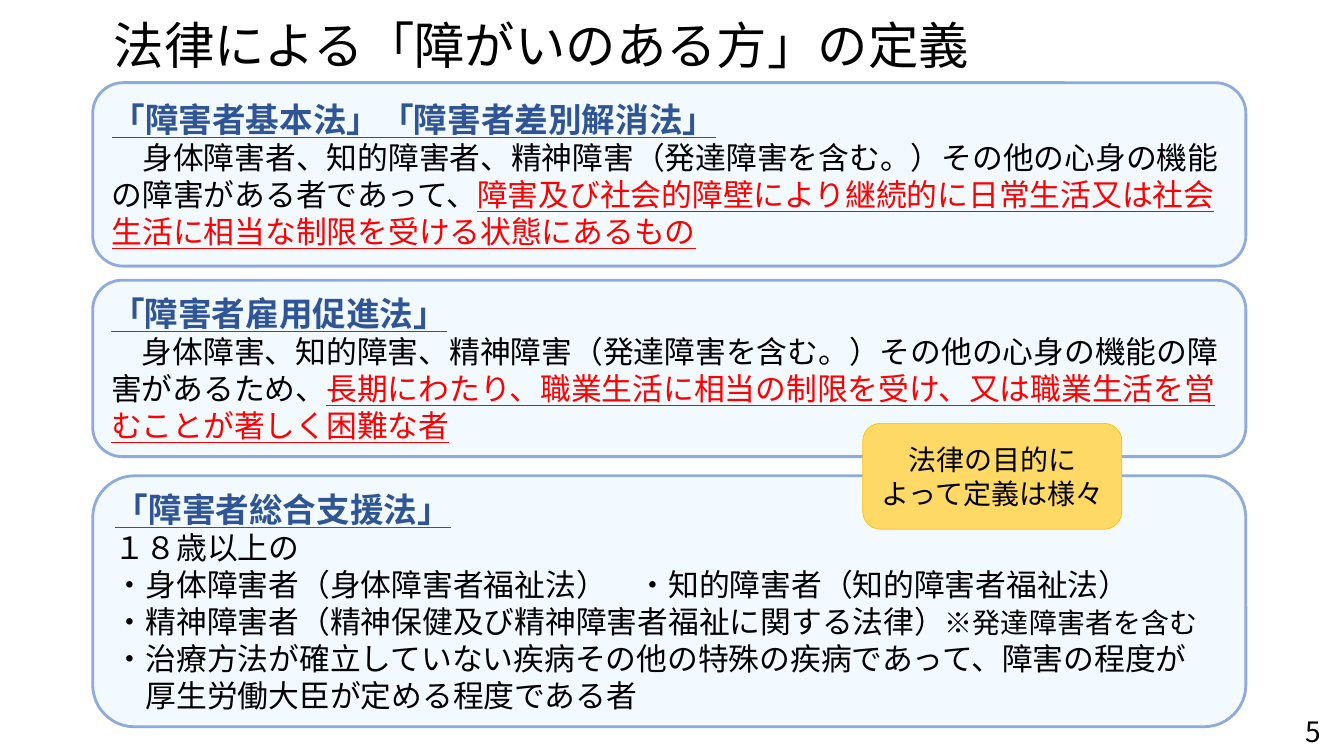
import pptx
import pptx.dml.color
import pptx.enum.shapes
import pptx.enum.text
import pptx.oxml.ns
import pptx.util
from lxml import etree

Pt = pptx.util.Pt
SHAPES = pptx.enum.shapes.MSO_SHAPE
ANCHOR = pptx.enum.text.MSO_ANCHOR
ALIGN = pptx.enum.text.PP_ALIGN
FONT = "Noto Sans CJK JP"
COLORS = {
    "panel": "F3FAFF", "panel_line": "8FAADC", "heading": "2F5597",
    "text": "000000", "key": "FF0000", "callout": "FFD966",
    "callout_line": "FFC000",
}
FORMATS = {
    "title": {"size": Pt(36)},
    "heading": {"size": Pt(24), "bold": True, "underline": True},
    "body": {"size": Pt(22)},
    "key": {"size": Pt(22), "underline": True},
    "note": {"size": Pt(20)},
}
PANEL_FRAME = {
    "word_wrap": True, "vertical_anchor": ANCHOR.MIDDLE,
    "margin_left": Pt(7.2), "margin_right": Pt(7.2),
    "margin_top": Pt(0), "margin_bottom": Pt(14.4),
}
LINE_HEIGHT = 1.2
PANEL_LEFT, PANEL_WIDTH = 66.24, 823.68
PANELS = [
    (59.04, 131.04, "「障害者基本法」「障害者差別解消法」", [
        [("　身体障害者、知的障害者、精神障害（発達障害を含む。）その他の心身の機能の障害がある者であって、", "body"),
         ("障害及び社会的障壁により継続的に日常生活又は社会生活に相当な制限を受ける状態にあるもの", "key")],
    ]),
    (200.16, 126, "「障害者雇用促進法」", [
        [("　身体障害、知的障害、精神障害（発達障害を含む。）その他の心身の機能の障害があるため、", "body"),
         ("長期にわたり、職業生活に相当の制限を受け、又は職業生活を営むことが著しく困難な者", "key")],
    ]),
    (339.84, 179.28, "「障害者総合支援法」", [
        [("１８歳以上の", "body")],
        [("・身体障害者（身体障害者福祉法）　・知的障害者（知的障害者福祉法）", "body")],
        [("・精神障害者（精神保健及び精神障害者福祉に関する法律）", "body"),
         ("※発達障害者を含む", "note")],
        [("・治療方法が確立していない疾病その他の特殊の疾病であって、障害の程度が", "body")],
        [("　厚生労働大臣が定める程度である者", "body")],
    ]),
]


def rgb(name):
    return pptx.dml.color.RGBColor.from_string(COLORS[name])


def apply(target, values):
    for name, value in values.items():
        setattr(target, name, value)


def add_run(p, text, style):
    r = p.add_run()
    r.text = text
    apply(r.font, {"name": FONT, **FORMATS[style]})
    r.font.color.rgb = rgb(style if style in COLORS else "text")
    ea = etree.SubElement(r.font._element, pptx.oxml.ns.qn("a:ea"))
    ea.set("typeface", FONT)


def write(tf, paragraphs, align=ALIGN.LEFT):
    for i, runs in enumerate(paragraphs):
        p = tf.paragraphs[0] if i == 0 else tf.add_paragraph()
        style = runs[0][1]
        height = FORMATS[style]["size"].pt * LINE_HEIGHT
        if style == "heading":
            height *= 1.5
        apply(p, {"alignment": align, "line_spacing": Pt(height)})
        for text, style in runs:
            add_run(p, text, style)


def add_box(s, kind, box, fill, line_width):
    sp = s.shapes.add_shape(kind, *map(Pt, box))
    sp.shadow.inherit = False
    sp.fill.solid()
    sp.fill.fore_color.rgb = rgb(fill)
    sp.line.color.rgb = rgb(fill + "_line")
    sp.line.width = Pt(line_width)
    return sp


def add_panel(s, box, heading, body):
    sp = add_box(s, SHAPES.ROUNDED_RECTANGLE, box, "panel", 2)
    apply(sp.text_frame, PANEL_FRAME)
    write(sp.text_frame, [[(heading, "heading")]] + body)


def add_callout(s, box, lines):
    sp = add_box(s, SHAPES.FLOWCHART_ALTERNATE_PROCESS, box, "callout", 0.5)
    apply(sp.text_frame, {"word_wrap": True, "vertical_anchor": ANCHOR.MIDDLE})
    write(sp.text_frame, [[(line, "note")] for line in lines], ALIGN.CENTER)


def add_label(s, box, text, style):
    tf = s.shapes.add_textbox(*map(Pt, box)).text_frame
    tf.word_wrap = True
    write(tf, [[(text, style)]])


def add_definition_slide(prs):
    s = prs.slides.add_slide(prs.slide_layouts[6])
    for top, height, heading, body in PANELS:
        add_panel(s, (PANEL_LEFT, top, PANEL_WIDTH, height), heading, body)
    add_callout(s, (616.32, 302.4, 185.04, 75.6), ["法律の目的に", "よって定義は様々"])
    add_label(s, (74.16, 6.48, 642.96, 51.12), "法律による「障がいのある方」の定義", "title")
    add_label(s, (925.2, 506.88, 28.08, 31.68), "5", "note")


def main():
    prs = pptx.Presentation()
    apply(prs, {"slide_width": Pt(960), "slide_height": Pt(540)})
    add_definition_slide(prs)
    prs.save("out.pptx")


if __name__ == "__main__":
    main()
